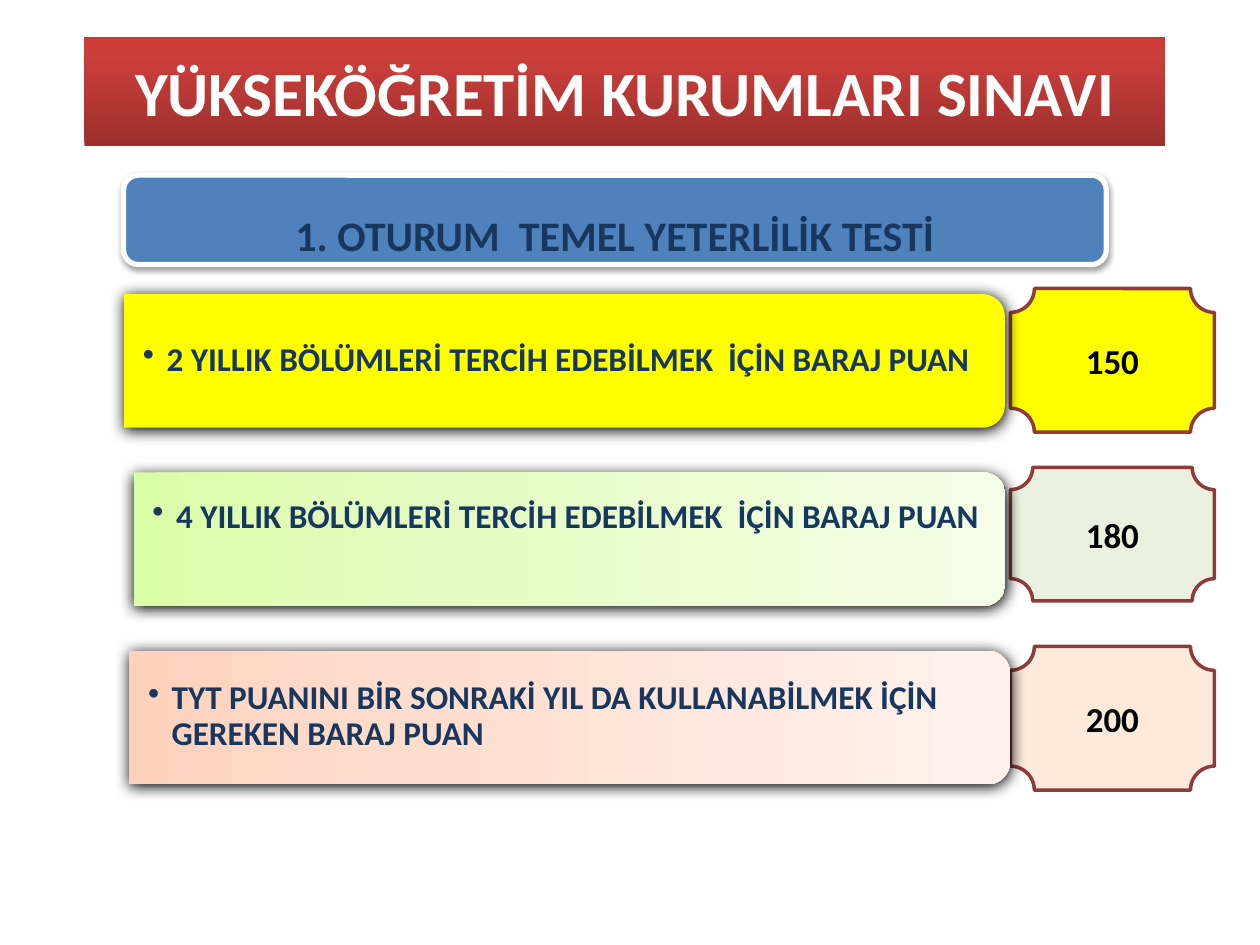
from dataclasses import dataclass

from lxml.etree import SubElement
from pptx import Presentation
from pptx.dml.color import RGBColor
from pptx.enum.shapes import MSO_SHAPE
from pptx.enum.text import MSO_ANCHOR, MSO_AUTO_SIZE, PP_ALIGN
from pptx.oxml.ns import qn
from pptx.util import Pt

FONT = "Calibri"
NAVY = "17375E"
BAR_H = 76.3
PLAQUE_X, PLAQUE_W = 577.4, 116.6


@dataclass
class Row:
    text: str
    score: str
    x: float
    y: float
    width: float
    text_h: float
    plaque_y: float
    plaque_h: float
    stops: list[tuple[int, str]]
    tint: str


ROWS = [
    Row("2 YILLIK BÖLÜMLERİ TERCİH EDEBİLMEK  İÇİN BARAJ PUAN", "150",
        70.9, 168.1, 503.3, 68.4, 164.9, 82.1, [(0, "FFFF00")], "FFFF00"),
    Row("4 YILLIK BÖLÜMLERİ TERCİH EDEBİLMEK  İÇİN BARAJ PUAN", "180",
        76.3, 270, 498.2, 44.6, 267.1, 76.3,
        [(0, "DAFDA7"), (35, "E4FCC2"), (100, "F5FFE7")], "EBF1DE"),
    Row("TYT PUANINI BİR SONRAKİ YIL DA KULLANABİLMEK İÇİN GEREKEN BARAJ PUAN",
        "200", 73.8, 371.9, 503.3, 68.4, 369.4, 82.1,
        [(0, "FFD2BD"), (35, "FFDED0"), (100, "FFF2ED")], "FDEADA"),
]


def color(code: str) -> RGBColor:
    return RGBColor.from_string(code)


def place(shape, x: float, y: float, w: float, h: float) -> None:
    shape.left, shape.top, shape.width, shape.height = map(Pt, (x, y, w, h))


def paint(shape, stops: list[tuple[int, str]]) -> None:
    """Fill solid for one stop, else with a gradient from bottom to top."""
    if len(stops) == 1:
        shape.fill.solid()
        shape.fill.fore_color.rgb = color(stops[0][1])
        return
    shape.fill.gradient()
    shape.fill.gradient_angle = 90
    ramp = shape._element.spPr.find(".//" + qn("a:gsLst"))
    ramp.clear()
    for pos, code in stops:
        stop = SubElement(ramp, qn("a:gs"), pos=str(pos * 1000))
        SubElement(stop, qn("a:srgbClr"), val=code)


def outline(shape, code: str, width: float) -> None:
    shape.line.color.rgb = color(code)
    shape.line.width = Pt(width)


def shade(shape, alpha: int, blur: float, dist: float) -> None:
    """Cast a black shadow straight down."""
    effects = shape._element.spPr.find(qn("a:effectLst"))
    shadow = SubElement(effects, qn("a:outerShdw"), blurRad=str(Pt(blur)),
                        dist=str(Pt(dist)), dir="5400000", rotWithShape="0")
    black = SubElement(shadow, qn("a:srgbClr"), val="000000")
    SubElement(black, qn("a:alpha"), val=str(alpha * 1000))


def add_shape(slide, kind, x: float, y: float, w: float, h: float):
    shape = slide.shapes.add_shape(kind, Pt(x), Pt(y), Pt(w), Pt(h))
    shape.shadow.inherit = False
    return shape


def write(shape, text: str, size: float, code: str, align=PP_ALIGN.CENTER):
    frame = shape.text_frame
    frame.word_wrap = True
    frame.auto_size = MSO_AUTO_SIZE.NONE
    frame.vertical_anchor = MSO_ANCHOR.MIDDLE
    para = frame.paragraphs[0]
    para.alignment = align
    run = para.add_run()
    run.text = text
    run.font.name, run.font.size, run.font.bold = FONT, Pt(size), True
    run.font.color.rgb = color(code)
    return para


def inset(frame, left: float, top: float, right: float, bottom: float) -> None:
    frame.margin_left, frame.margin_top = Pt(left), Pt(top)
    frame.margin_right, frame.margin_bottom = Pt(right), Pt(bottom)


def add_title(slide) -> None:
    title = slide.shapes.title
    place(title, 48.2, 20.9, 617.8, 62.6)
    geom = SubElement(title._element.spPr, qn("a:prstGeom"), prst="roundRect")
    SubElement(geom, qn("a:avLst"))
    paint(title, [(0, "9C2F2D"), (80, "CB3E3A"), (100, "CE3B37")])
    write(title, "YÜKSEKÖĞRETİM KURUMLARI SINAVI", 36, "FFFFFF")


def add_header(slide) -> None:
    box = add_shape(slide, MSO_SHAPE.ROUNDED_RECTANGLE, 70.6, 100.1, 561.6, 51.1)
    paint(box, [(0, "4F81BD")])
    outline(box, "FFFFFF", 3)
    shade(box, 38, 3.1, 1.6)
    write(box, "1. OTURUM  TEMEL YETERLİLİK TESTİ", 24, NAVY)
    inset(box.text_frame, 7.2, 18, 7.2, 1.6)


def add_row(slide, row: Row) -> None:
    plaque = add_shape(slide, MSO_SHAPE.PLAQUE, PLAQUE_X, row.plaque_y,
                       PLAQUE_W, row.plaque_h)
    paint(plaque, [(0, row.tint)])
    outline(plaque, "8E3B39", 2)
    write(plaque, row.score, 20, "000000")

    # A quarter turn brings the two rounded corners to the right
    shift = (row.width - BAR_H) / 2
    bar = add_shape(slide, MSO_SHAPE.ROUND_2_SAME_RECTANGLE, row.x + shift,
                    row.y - shift, BAR_H, row.width)
    bar.rotation = 90
    paint(bar, row.stops)
    bar.line.fill.background()
    shade(bar, 100, 8.5, 1)

    label = slide.shapes.add_textbox(Pt(row.x), Pt(row.y + 3.7),
                                     Pt(row.width - 4), Pt(row.text_h))
    para = write(label, row.text, 19, NAVY, PP_ALIGN.LEFT)
    inset(label.text_frame, 10.8, 0.7, 0.7, 0.7)
    para.line_spacing = 0.9
    props = para._p.get_or_add_pPr()
    props.set("marL", str(Pt(13.5)))
    props.set("indent", str(-Pt(13.5)))
    SubElement(props, qn("a:buChar"), char="•")


def main() -> None:
    deck = Presentation()
    deck.slide_width, deck.slide_height = Pt(720), Pt(540)
    slide = deck.slides.add_slide(deck.slide_layouts[5])
    add_title(slide)
    for row in ROWS:
        add_row(slide, row)
    add_header(slide)
    deck.save("out.pptx")


if __name__ == "__main__":
    main()
